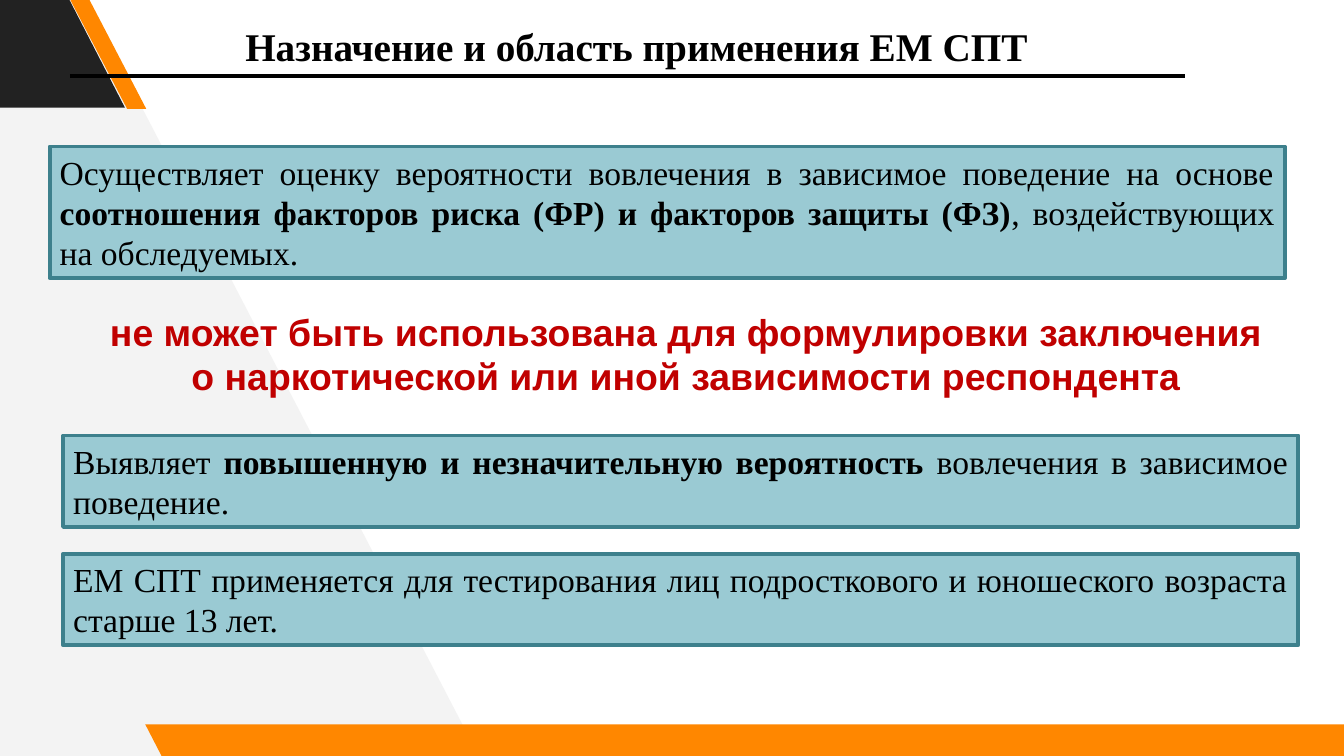
from dataclasses import dataclass

import pptx
import pptx.dml.color
import pptx.enum.shapes
import pptx.enum.text
import pptx.oxml.ns
import pptx.util
from pptx.util import Pt

COLORS = {
    "page": "FFFFFF", "pale": "F3F3F3", "dark": "222222", "orange": "FF8700",
    "fill": "9ACAD3", "edge": "3D808C", "black": "000000", "red": "C00000",
}
SHAPES = pptx.enum.shapes.MSO_SHAPE
ALIGN = pptx.enum.text.PP_ALIGN
SERIF = "Times New Roman"


@dataclass
class Box:
    left: float
    top: float
    width: float
    height: float

    def place(self) -> list:
        return [Pt(n) for n in (self.left, self.top, self.width, self.height)]


@dataclass
class Band:
    box: Box
    slant: float
    color: str


@dataclass
class Style:
    font: str
    size: float
    color: str
    align: int


@dataclass
class Card:
    box: Box
    words: list  # (text, bold) pairs


def tint(name: str) -> pptx.dml.color.RGBColor:
    return pptx.dml.color.RGBColor.from_string(COLORS[name])


def paint(shape, color: str) -> None:
    shape.shadow.inherit = False
    shape.fill.solid()
    shape.fill.fore_color.rgb = tint(color)
    shape.line.fill.background()


def write(shape, words: list, style: Style, wrap: bool = True) -> None:
    frame = shape.text_frame
    frame.word_wrap = wrap
    frame.auto_size = pptx.enum.text.MSO_AUTO_SIZE.SHAPE_TO_FIT_TEXT
    frame.vertical_anchor = pptx.enum.text.MSO_ANCHOR.TOP
    frame.margin_left = frame.margin_right = Pt(5.4)
    frame.margin_top = frame.margin_bottom = Pt(2.7)
    line = frame.paragraphs[0]
    line.alignment = style.align
    for text, bold in words:
        run = line.add_run()
        run.text = text
        run.font.name = style.font
        run.font.size = Pt(style.size)
        run.font.bold = bold
        run.font.color.rgb = tint(style.color)


def add_band(slide, band: Band) -> None:
    shape = slide.shapes.add_shape(SHAPES.PARALLELOGRAM, *band.box.place())
    shape.adjustments[0] = band.slant
    shape._element.spPr.xfrm.set("flipH", "1")
    paint(shape, band.color)


def add_card(slide, card: Card, style: Style) -> None:
    shape = slide.shapes.add_shape(SHAPES.RECTANGLE, *card.box.place())
    paint(shape, "fill")
    shape.line.color.rgb = tint("edge")
    shape.line.width = Pt(2)
    write(shape, card.words, style)


def add_label(slide, box: Box, text: str, style: Style, wrap: bool) -> None:
    write(slide.shapes.add_textbox(*box.place()), [(text, True)], style, wrap)


def add_rule(slide, left: float, right: float, top: float) -> None:
    rule = slide.shapes.add_connector(
        pptx.enum.shapes.MSO_CONNECTOR.STRAIGHT,
        Pt(left), Pt(top), Pt(right), Pt(top))
    rule.line.color.rgb = tint("black")
    rule.line.width = Pt(2)
    effects = pptx.oxml.ns.qn("a:effectLst")
    rule._element.spPr.append(rule._element.makeelement(effects, {}))


BANDS = [
    Band(Box(-71.3, -1.4, 138.2, 59), 0.515, "dark"),
    Band(Box(37.4, -0.7, 41, 59), 0.75, "orange"),
    Band(Box(77.8, 388, 658.8, 18), 0.515, "orange"),
]
WEDGE = [(256.3, 404.6), (44.6, -2.9), (-4.3, -2.9), (-1.4, 407.5)]
CARDS = [
    Card(Box(26.6, 78.5, 661.7, 70.6), [
        ("Осуществляет оценку вероятности вовлечения в зависимое поведение на основе ", False),
        ("соотношения факторов риска (ФР) и факторов защиты (ФЗ)", True),
        (", воздействующих на обследуемых.", False)]),
    Card(Box(33.8, 233.3, 661.7, 49), [
        ("Выявляет ", False),
        ("повышенную и незначительную вероятность ", True),
        ("вовлечения в зависимое поведение.", False)]),
    Card(Box(33.8, 296.7, 661.7, 49), [
        ("ЕМ СПТ применяется для тестирования лиц подросткового "
         "и юношеского возраста старше 13 лет.", False)]),
]


def main() -> None:
    deck = pptx.Presentation()
    deck.slide_width, deck.slide_height = Pt(720), Pt(405)
    slide = deck.slides.add_slide(deck.slide_layouts[6])
    slide.background.fill.solid()
    slide.background.fill.fore_color.rgb = tint("page")

    # Backdrop: pale wedge and slanted bands
    spots = [(Pt(x), Pt(y)) for x, y in WEDGE]
    pen = slide.shapes.build_freeform(*spots[0])
    pen.add_line_segments(spots[1:], close=True)
    paint(pen.convert_to_shape(), "pale")
    for band in BANDS:
        add_band(slide, band)

    # Title and its rule
    add_label(slide, Box(126, 9.4, 434.2, 31),
              "Назначение и область применения ЕМ СПТ",
              Style(SERIF, 21, "black", ALIGN.LEFT), False)
    add_rule(slide, 37.4, 635, 40.7)

    # Statement cards
    for card in CARDS:
        add_card(slide, card, Style(SERIF, 18, "black", ALIGN.JUSTIFY))

    # Warning
    add_label(slide, Box(51.1, 162.7, 632.9, 54),
              "не может быть использована для формулировки заключения "
              "о наркотической или иной зависимости респондента",
              Style("Arial", 20, "red", ALIGN.CENTER), True)

    deck.save("out.pptx")


if __name__ == "__main__":
    main()
